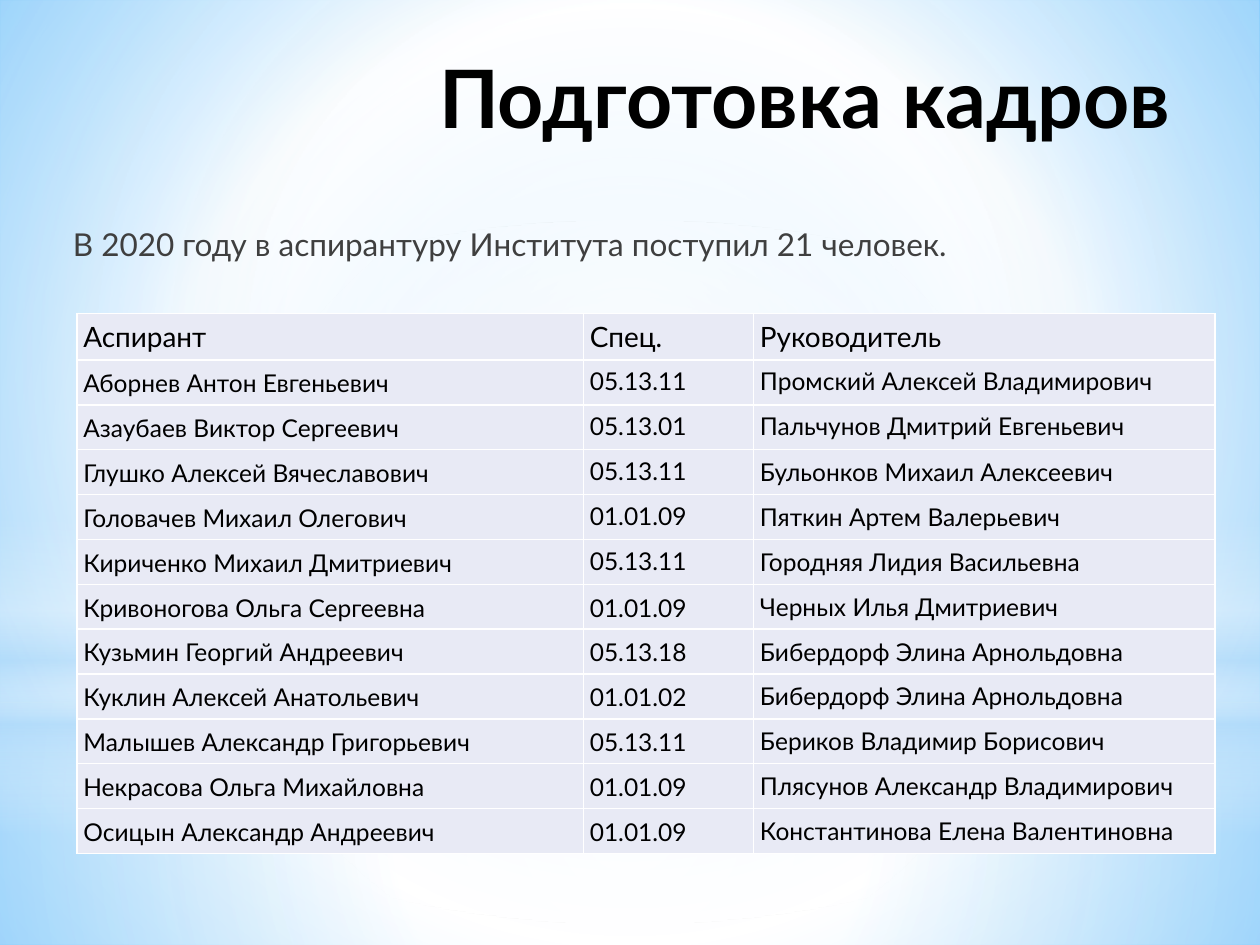
from collections import namedtuple

from lxml.etree import SubElement
from pptx import Presentation
from pptx.dml.color import RGBColor
from pptx.enum.shapes import MSO_SHAPE
from pptx.enum.text import MSO_ANCHOR, PP_ALIGN
from pptx.oxml import parse_xml
from pptx.oxml.ns import nsdecls, qn
from pptx.util import Cm, Pt

Box = namedtuple("Box", "left top width height")

FONT = "Lato"
COLORS = {
    "white": "FFFFFF",
    "haze": "B4DCFA",
    "center": "99D4FE",
    "edge": "54BDFF",
    "title": "000000",
    "intro": "3F3F3F",
    "cell": "E8EAF5",
}

PAGE = Box(0, 0, 25.4, 19.05)
TITLE = Box(6.71, 0.84, 17.12, 3.38)
INTRO = Box(1.09, 3.78, 23.39, 13.92)
TABLE = Box(1.55, 6.32, 22.94, 10.85)
COLUMN_WIDTHS = (10.21, 3.43, 9.3)
MIDDLE_FROM_ROW = (0, 6, 3)
LOOSE_FROM_ROW = (1, 6, 12)

STUDENTS = [
    ("Аспирант", "Спец.", "Руководитель"),
    ("Аборнев Антон Евгеньевич", "05.13.11", "Промский Алексей Владимирович"),
    ("Азаубаев Виктор Сергеевич", "05.13.01", "Пальчунов Дмитрий Евгеньевич"),
    ("Глушко Алексей Вячеславович", "05.13.11", "Бульонков Михаил Алексеевич"),
    ("Головачев Михаил Олегович", "01.01.09", "Пяткин Артем Валерьевич"),
    ("Кириченко Михаил Дмитриевич", "05.13.11", "Городняя Лидия Васильевна"),
    ("Кривоногова Ольга Сергеевна", "01.01.09", "Черных Илья Дмитриевич"),
    ("Кузьмин Георгий Андреевич", "05.13.18", "Бибердорф Элина Арнольдовна"),
    ("Куклин Алексей Анатольевич", "01.01.02", "Бибердорф Элина Арнольдовна"),
    ("Малышев Александр Григорьевич", "05.13.11", "Бериков Владимир Борисович"),
    ("Некрасова Ольга Михайловна", "01.01.09", "Плясунов Александр Владимирович"),
    ("Осицын Александр Андреевич", "01.01.09", "Константинова Елена Валентиновна"),
]


def paint_gradient(owner, fill, stops, radial=True):
    """Fill the owner with (position, colour, opacity) stops, all in percent."""
    fill.gradient()
    gradient = owner.element.find(".//" + qn("a:gradFill"))
    for child in list(gradient):
        gradient.remove(child)
    stop_list = SubElement(gradient, qn("a:gsLst"))
    for position, color, opacity in stops:
        stop = SubElement(stop_list, qn("a:gs"), pos=str(position * 1000))
        tint = SubElement(stop, qn("a:srgbClr"), val=COLORS[color])
        SubElement(tint, qn("a:alpha"), val=str(opacity * 1000))
    if radial:
        circle = SubElement(gradient, qn("a:path"), path="circle")
        SubElement(circle, qn("a:fillToRect"), l="50000", t="50000", r="50000", b="50000")
    else:
        SubElement(gradient, qn("a:lin"), ang="5400000", scaled="0")


def add_backdrop(slide, box):
    """Paint the page and lay the translucent bands and the glow over it."""
    paint_gradient(slide, slide.background.fill,
                   [(0, "center", 100), (60, "white", 100), (100, "edge", 100)])
    horizon = 14.17
    layers = [
        (MSO_SHAPE.RECTANGLE, horizon, box.height - horizon, True,
         [(0, "white", 90), (37, "white", 75), (100, "haze", 78)]),
        (MSO_SHAPE.RECTANGLE, 0, horizon, True,
         [(0, "white", 87), (48, "white", 61), (100, "haze", 78)]),
        (MSO_SHAPE.RECTANGLE, 10.46, 6.35, False,
         [(0, "white", 0), (29, "white", 29), (45, "haze", 40),
          (55, "white", 25), (65, "haze", 60), (100, "white", 0)]),
        (MSO_SHAPE.OVAL, 4.45, horizon, True,
         [(0, "white", 100), (56, "white", 0), (100, "white", 0)]),
    ]
    for preset, offset, height, radial, stops in layers:
        layer = slide.shapes.add_shape(
            preset, Cm(box.left), Cm(box.top + offset), Cm(box.width), Cm(height))
        layer.shadow.inherit = False
        layer.line.fill.background()
        paint_gradient(layer, layer.fill, stops, radial)


def write_run(paragraph, text, size, color, bold=False):
    """Append one styled run to the paragraph."""
    run = paragraph.add_run()
    run.text = text
    run.font.name = FONT
    run.font.size = Pt(size)
    run.font.bold = bold
    run.font.color.rgb = RGBColor.from_string(COLORS[color])


def add_text_frame(slide, box):
    """Add a wrapping text box and return its frame."""
    frame = slide.shapes.add_textbox(*map(Cm, box)).text_frame
    frame.word_wrap = True
    return frame


def add_title(slide, box):
    """Place the right-aligned heading."""
    heading = add_text_frame(slide, box).paragraphs[0]
    heading.alignment = PP_ALIGN.RIGHT
    write_run(heading, "Подготовка кадров", 46, "title", bold=True)


def add_intro(slide, box):
    """Place the sentence that leads into the table."""
    frame = add_text_frame(slide, box)
    frame.margin_left = Cm(0.38)
    frame.margin_top = Cm(0.9)
    sentence = frame.paragraphs[0]
    sentence.line_spacing = 0.8
    write_run(sentence, "В 2020 году в аспирантуру Института поступил 21 человек.", 18, "intro")


def style_cell(cell):
    """Give the cell its fill, insets and white borders."""
    cell.fill.solid()
    cell.fill.fore_color.rgb = RGBColor.from_string(COLORS["cell"])
    cell.margin_left = cell.margin_right = Cm(0.13)
    cell.margin_top = cell.margin_bottom = Cm(0.13)
    properties = cell._tc.get_or_add_tcPr()
    for order, side in enumerate("LRTB"):
        properties.insert(order, parse_xml(
            f'<a:ln{side} {nsdecls("a")} w="12700"><a:solidFill>'
            f'<a:srgbClr val="{COLORS["white"]}"/></a:solidFill></a:ln{side}>'))


def add_student_table(slide, box):
    """Place the table of students, specialities and supervisors."""
    table = slide.shapes.add_table(len(STUDENTS), len(COLUMN_WIDTHS), *map(Cm, box)).table
    for column, width in zip(table.columns, COLUMN_WIDTHS):
        column.width = Cm(width)
    for row_index, student in enumerate(STUDENTS):
        table.rows[row_index].height = Cm(box.height / len(STUDENTS))
        for column_index, text in enumerate(student):
            cell = table.cell(row_index, column_index)
            style_cell(cell)
            if row_index >= MIDDLE_FROM_ROW[column_index]:
                cell.vertical_anchor = MSO_ANCHOR.MIDDLE
            entry = cell.text_frame.paragraphs[0]
            if row_index >= LOOSE_FROM_ROW[column_index]:
                entry.line_spacing = 1.07
            write_run(entry, text, 14 if row_index else 16, "title")


def main():
    """Build the slide and save it."""
    presentation = Presentation()
    presentation.slide_width = Cm(PAGE.width)
    presentation.slide_height = Cm(PAGE.height)
    slide = presentation.slides.add_slide(presentation.slide_layouts[6])
    add_backdrop(slide, PAGE)
    add_title(slide, TITLE)
    add_intro(slide, INTRO)
    add_student_table(slide, TABLE)
    presentation.save("out.pptx")


if __name__ == "__main__":
    main()
